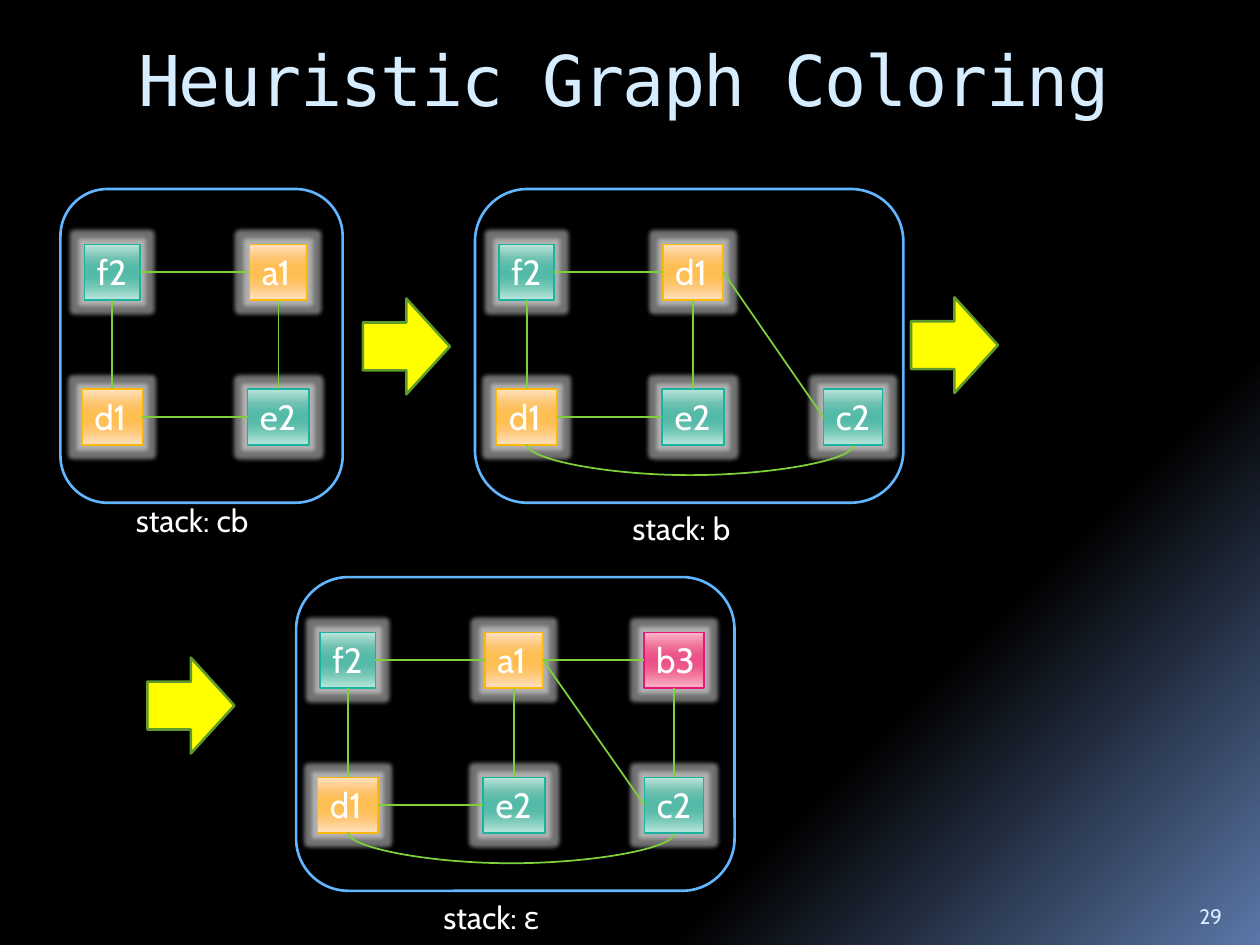
from lxml import etree
from pptx import Presentation
from pptx import util as u
from pptx.dml.color import RGBColor
from pptx.enum import shapes, text
from pptx.oxml.ns import qn

COLORS = {
    "title": "D6ECFF", "text": "FFFFFF", "glow": "FFFFFF", "edge": "7FD13B",
    "frame": "61B6FF", "arrow": "FFFF00", "arrow_line": "5E9B2C",
    "1": "FEB80A", "2": "1AB39F", "3": "EA157A",
}
NODE_STOPS = {
    "1": "FFE1BF FEC570 FEBF55 FEBE51 FEBF55 FFC775 FFE1BF".split(),
    "2": "BBE5DB 71C1B2 57BBA9 53BAA8 57BBA9 74C6B6 B9E6DC".split(),
    "3": "FFB6C9 ED7198 EC568B EC5289 EC568B F2729A FFB6C9".split(),
}
STOP_POSITIONS = (0, 25, 40, 50, 60, 75, 100)
BACKDROP = ((65, "000000"), (73, "000000"), (100, "5B77A8"))
COLUMNS = (0.41, 1.73, 3.0)
ROWS = (0.66, 1.81)
NODE_WIDTHS = {"f2": 0.44, "a1": 0.46, "e2": 0.49, "c2": 0.47}
NODE_HEIGHT = 0.44
TOP, LEFT, BOTTOM, RIGHT = range(4)

SQUARE = [
    ((0, 0), RIGHT, (1, 0), LEFT),
    ((0, 1), TOP, (0, 0), BOTTOM),
    ((1, 1), LEFT, (0, 1), RIGHT),
    ((1, 0), BOTTOM, (1, 1), TOP),
]
DIAGONAL = [((1, 0), RIGHT, (2, 1), LEFT)]
B_EDGES = [((1, 0), RIGHT, (2, 0), LEFT), ((2, 0), BOTTOM, (2, 1), TOP)]

PANELS = [
    ((2.35, 4.58, 3.48, 2.49), ("f2 a1 b3", "d1 e2 c2"),
     SQUARE + DIAGONAL + B_EDGES, "stack: ε", (1.07, 2.5, 0.98)),
    ((3.77, 1.5, 3.4, 2.49), ("f2 d1", "d1 e2 c2"),
     SQUARE + DIAGONAL, "stack: b", (1.15, 2.49, 1)),
    ((0.48, 1.5, 2.24, 2.49), ("f2 a1", "d1 e2"),
     SQUARE, "stack: cb", (0.5, 2.43, 1.11)),
]
ARROWS = ((7.23, 2.36), (2.88, 2.37), (1.17, 5.22))


def inches(*lengths):
    """Convert lengths to slide units."""
    return [u.Inches(length) for length in lengths]


def rgb(name):
    """Look up a named colour."""
    return RGBColor.from_string(COLORS[name])


def add_child(parent, tag, **attributes):
    """Append a drawing element to its parent."""
    return etree.SubElement(parent, qn(tag), **attributes)


def set_gradient(fill, owner, stops, angle):
    """Give a fill a linear gradient with any number of stops."""
    fill.gradient()
    fill.gradient_angle = 360 - angle
    stop_list = owner.find(".//" + qn("a:gsLst"))
    for stop in list(stop_list):
        stop_list.remove(stop)
    for position, color in stops:
        stop = add_child(stop_list, "a:gs", pos=str(position * 1000))
        add_child(stop, "a:srgbClr", val=color)


def set_line(shape, color, width):
    """Set the colour and width of an outline."""
    shape.line.color.rgb = rgb(color)
    shape.line.width = u.Pt(width)


def style_text(frame, size, color="text", font="Cabin"):
    """Format every run of a left-aligned text frame."""
    for paragraph in frame.paragraphs:
        paragraph.alignment = text.PP_ALIGN.LEFT
        for run in paragraph.runs:
            run.font.size = u.Pt(size)
            run.font.name = font
            run.font.color.rgb = rgb(color)


def add_label(slide, box, words, size, color="text", anchor=text.MSO_ANCHOR.TOP):
    """Place a single-line text box."""
    frame = slide.shapes.add_textbox(*inches(*box)).text_frame
    frame.text = words
    frame.word_wrap = False
    frame.vertical_anchor = anchor
    style_text(frame, size, color)


def add_node(slide, center, label):
    """Place a glowing graph node whose digit decides its colour."""
    x, y = center
    width = NODE_WIDTHS.get(label, 0.48)
    node = slide.shapes.add_shape(
        shapes.MSO_SHAPE.RECTANGLE,
        *inches(x - width / 2, y - NODE_HEIGHT / 2, width, NODE_HEIGHT))
    color = label[-1]
    set_gradient(node.fill, node._element.spPr,
                 zip(STOP_POSITIONS, NODE_STOPS[color]), 90)
    set_line(node, color, 0.94)
    node.shadow.inherit = False
    effects = node._element.spPr.find(qn("a:effectLst"))
    glow = add_child(effects, "a:glow", rad=str(u.Inches(0.07)))
    tint = add_child(glow, "a:srgbClr", val=COLORS["glow"])
    add_child(tint, "a:alpha", val="45000")
    frame = node.text_frame
    frame.text = label
    frame.word_wrap = False
    frame.vertical_anchor = text.MSO_ANCHOR.TOP
    style_text(frame, 20)
    return node


def add_edge(slide, kind, ends):
    """Draw a connector between two points without a shadow."""
    edge = slide.shapes.add_connector(kind, *inches(*ends))
    set_line(edge, "edge", 1)
    add_child(edge._element.spPr, "a:effectLst")
    return edge


def add_arc(slide, start_x, end_x, y):
    """Draw a curved edge that sags below two node bottoms."""
    thickness, sag = 0.01, 0.25
    span = end_x - start_x
    x = (start_x + end_x - thickness) / 2
    top = y - span / 2
    arc = add_edge(slide, shapes.MSO_CONNECTOR.CURVE,
                   (x, top, x + thickness, top + span))
    properties = arc._element.spPr
    frame = properties.find(qn("a:xfrm"))
    frame.set("rot", "16200000")
    frame.set("flipH", "1")
    guides = properties.find(qn("a:prstGeom")).find(qn("a:avLst"))
    bend = round(sag / thickness * 100000)
    add_child(guides, "a:gd", name="adj1", fmla=f"val {bend}")


def add_panel(slide, box, labels, edges, caption, caption_place):
    """Draw one coloring step: nodes, edges, frame and stack caption."""
    left, top, width, height = box
    nodes = {}
    for row, line in enumerate(labels):
        for column, label in enumerate(line.split()):
            center = left + COLUMNS[column], top + ROWS[row]
            nodes[column, row] = add_node(slide, center, label)
    for start, start_side, end, end_side in edges:
        edge = add_edge(slide, shapes.MSO_CONNECTOR.STRAIGHT, (0, 0, 0, 0))
        edge.begin_connect(nodes[start], start_side)
        edge.end_connect(nodes[end], end_side)
    if (2, 1) in nodes:
        add_arc(slide, left + COLUMNS[0], left + COLUMNS[2],
                top + ROWS[1] + NODE_HEIGHT / 2)
    frame = slide.shapes.add_shape(
        shapes.MSO_SHAPE.ROUNDED_RECTANGLE, *inches(*box))
    frame.fill.background()
    frame.shadow.inherit = False
    set_line(frame, "frame", 1.5)
    dx, dy, caption_width = caption_place
    add_label(slide, (left + dx, top + dy, caption_width, 0.4), caption, 18)


def add_arrow(slide, left, top):
    """Place a block arrow leading to the next step."""
    arrow = slide.shapes.add_shape(
        shapes.MSO_SHAPE.RIGHT_ARROW, *inches(left, top, 0.69, 0.76))
    arrow.fill.solid()
    arrow.fill.fore_color.rgb = rgb("arrow")
    arrow.shadow.inherit = False
    set_line(arrow, "arrow_line", 1.5)


def add_title(slide, box):
    """Fill and format the title placeholder."""
    title = slide.shapes.title
    title.left, title.top, title.width, title.height = inches(*box)
    frame = title.text_frame
    frame.text = "Heuristic Graph Coloring"
    frame.vertical_anchor = text.MSO_ANCHOR.MIDDLE
    frame.margin_bottom = u.Inches(0.3)
    style_text(frame, 40, "title", "DejaVu Sans Mono")
    frame.paragraphs[0].runs[0].font._element.set("spc", "-100")


def main():
    """Build and save the slide."""
    deck = Presentation()
    deck.slide_width, deck.slide_height = inches(10, 7.5)
    slide = deck.slides.add_slide(deck.slide_layouts[5])
    set_gradient(slide.background.fill, slide._element, BACKDROP, 45)
    add_title(slide, (1, 0.25, 8.5, 1))
    for panel in PANELS:
        add_panel(slide, *panel)
    for place in ARROWS:
        add_arrow(slide, *place)
    add_label(slide, (9.42, 7.02, 0.5, 0.4), "29", 12, "title",
              text.MSO_ANCHOR.BOTTOM)
    deck.save("out.pptx")


if __name__ == "__main__":
    main()
